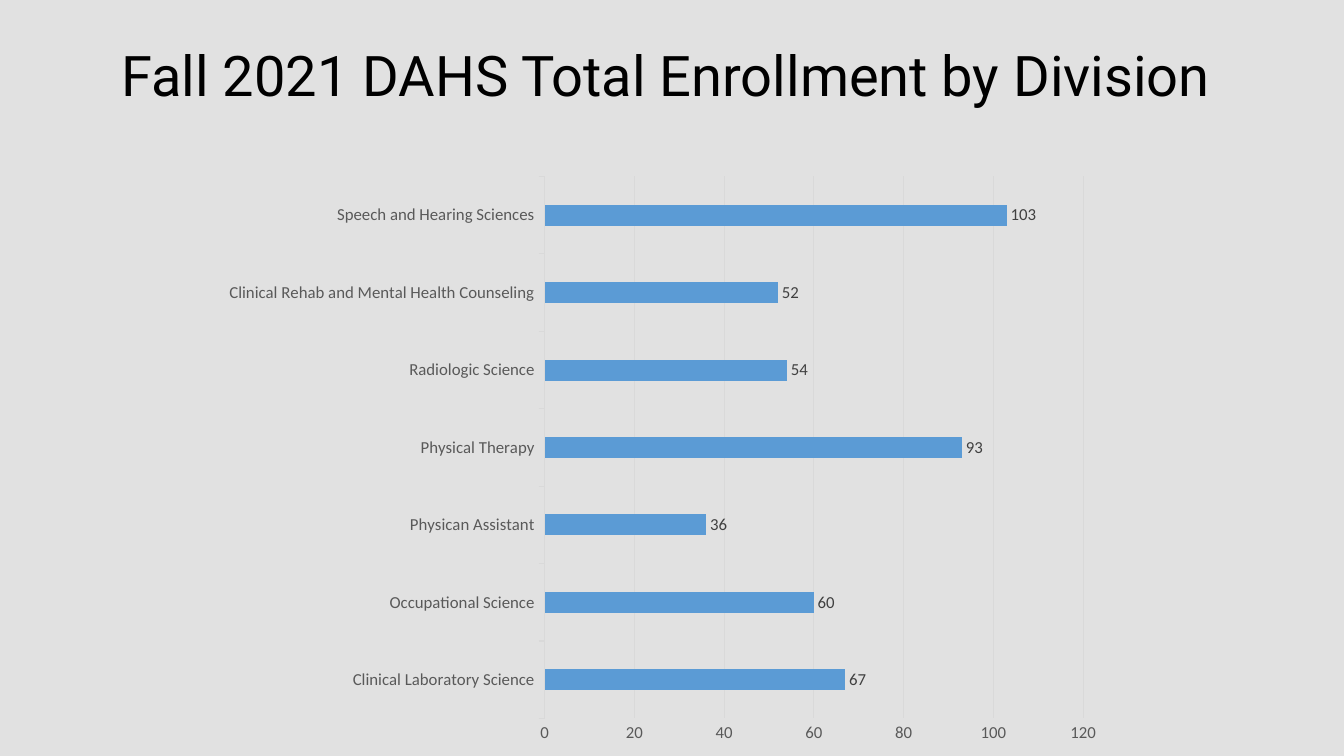
import pptx
import pptx.chart.data
import pptx.dml.color
import pptx.enum.chart
import pptx.enum.shapes
import pptx.enum.text
import pptx.oxml
import pptx.util
from pptx.util import Cm, Pt

TITLE = "Fall 2021 DAHS Total Enrollment by Division "
ENROLLMENT = {
    "Clinical Laboratory Science": 67,
    "Occupational Science": 60,
    "Physican Assistant": 36,
    "Physical Therapy": 93,
    "Radiologic Science": 54,
    "Clinical Rehab and Mental Health Counseling": 52,
    "Speech and Hearing Sciences": 103,
}
COLORS = {
    "backdrop": "E1E1E1",
    "title": "000000",
    "bar": "5B9BD5",
    "axis": "595959",
    "label": "404040",
    "grid": "D9D9D9",
}
SLIDE_SIZE = Cm(33.87), Cm(19.05)
TITLE_BOX = Cm(1.85), Cm(0.89), Cm(30.2), Cm(1.96)
CHART_BOX = Cm(5.46), Cm(3.89), Cm(22.58), Cm(15.06)
PLOT_AREA = {"x": 0.366, "y": 0.037, "w": 0.601, "h": 0.907}


def rgb(name):
    return pptx.dml.color.RGBColor.from_string(COLORS[name])


def set_font(font, color, size, name="Calibri"):
    font.name, font.size, font.bold = name, Pt(size), False
    font.color.rgb = rgb(color)


def write(tf, text, align=pptx.enum.text.PP_ALIGN.CENTER, **font):
    p = tf.paragraphs[0]
    p.alignment = align
    r = p.add_run()
    r.text = text
    set_font(r.font, **font)


def set_line(fmt, color):
    fmt.line.color.rgb = rgb(color)
    fmt.line.width = Pt(0.75)


def place_plot(chart):
    """Fix the inner plot area as fractions of the chart frame."""
    plot_area = chart.plots[0]._element.getparent()
    for old in plot_area.findall(pptx.oxml.ns.qn("c:layout")):
        plot_area.remove(old)
    modes = "".join(f'<c:{k}Mode val="edge"/>' for k in "xy")
    sizes = "".join(f'<c:{k} val="{v}"/>' for k, v in PLOT_AREA.items())
    plot_area.insert(0, pptx.oxml.parse_xml(
        f'<c:layout {pptx.oxml.ns.nsdecls("c")}><c:manualLayout>'
        f'<c:layoutTarget val="inner"/>{modes}{sizes}'
        '</c:manualLayout></c:layout>'))


def add_backdrop(s):
    rect = s.shapes.add_shape(
        pptx.enum.shapes.MSO_SHAPE.RECTANGLE, 0, 0, *SLIDE_SIZE)
    rect.shadow.inherit = False
    rect.fill.solid()
    rect.fill.fore_color.rgb = rgb("backdrop")
    rect.line.fill.background()
    s.shapes.element.insert(2, rect.element)  # behind the title


def add_title(s):
    title = s.shapes.title
    title.left, title.top, title.width, title.height = TITLE_BOX
    tf = title.text_frame
    tf.auto_size = pptx.enum.text.MSO_AUTO_SIZE.SHAPE_TO_FIT_TEXT
    tf.word_wrap = True
    tf.vertical_anchor = pptx.enum.text.MSO_ANCHOR.TOP
    write(tf, TITLE, color="title", size=40, name="Roboto")


def add_enrollment_chart(s):
    xl = pptx.enum.chart
    data = pptx.chart.data.CategoryChartData()
    data.categories = list(ENROLLMENT)
    data.add_series("Series 1", list(ENROLLMENT.values()))
    chart = s.shapes.add_chart(
        xl.XL_CHART_TYPE.BAR_CLUSTERED, *CHART_BOX, data).chart
    chart.has_legend = chart.has_title = False
    set_font(chart.font, "title", 10)

    plot = chart.plots[0]
    plot.gap_width, plot.overlap = 269, -50
    plot.vary_by_categories = False
    bars = plot.series[0]
    bars.format.fill.solid()
    bars.format.fill.fore_color.rgb = rgb("bar")
    labels = bars.data_labels
    labels.show_value = True
    labels.position = xl.XL_LABEL_POSITION.OUTSIDE_END
    set_font(labels.font, "label", 12)

    cat, val = chart.category_axis, chart.value_axis
    for axis in (cat, val):
        set_font(axis.tick_labels.font, "axis", 12)
        axis.minor_tick_mark = xl.XL_TICK_MARK.NONE
    cat.major_tick_mark = xl.XL_TICK_MARK.OUTSIDE
    set_line(cat.format, "grid")
    val.major_tick_mark = xl.XL_TICK_MARK.NONE
    val.format.line.fill.background()
    val.minimum_scale, val.maximum_scale, val.major_unit = 0, 120, 20
    val.has_major_gridlines = True
    set_line(val.major_gridlines.format, "grid")
    place_plot(chart)


def main():
    prs = pptx.Presentation()
    prs.slide_width, prs.slide_height = SLIDE_SIZE
    s = prs.slides.add_slide(prs.slide_layouts.get_by_name("Title Only"))
    add_backdrop(s)
    add_title(s)
    add_enrollment_chart(s)
    prs.save("out.pptx")


if __name__ == "__main__":
    main()
